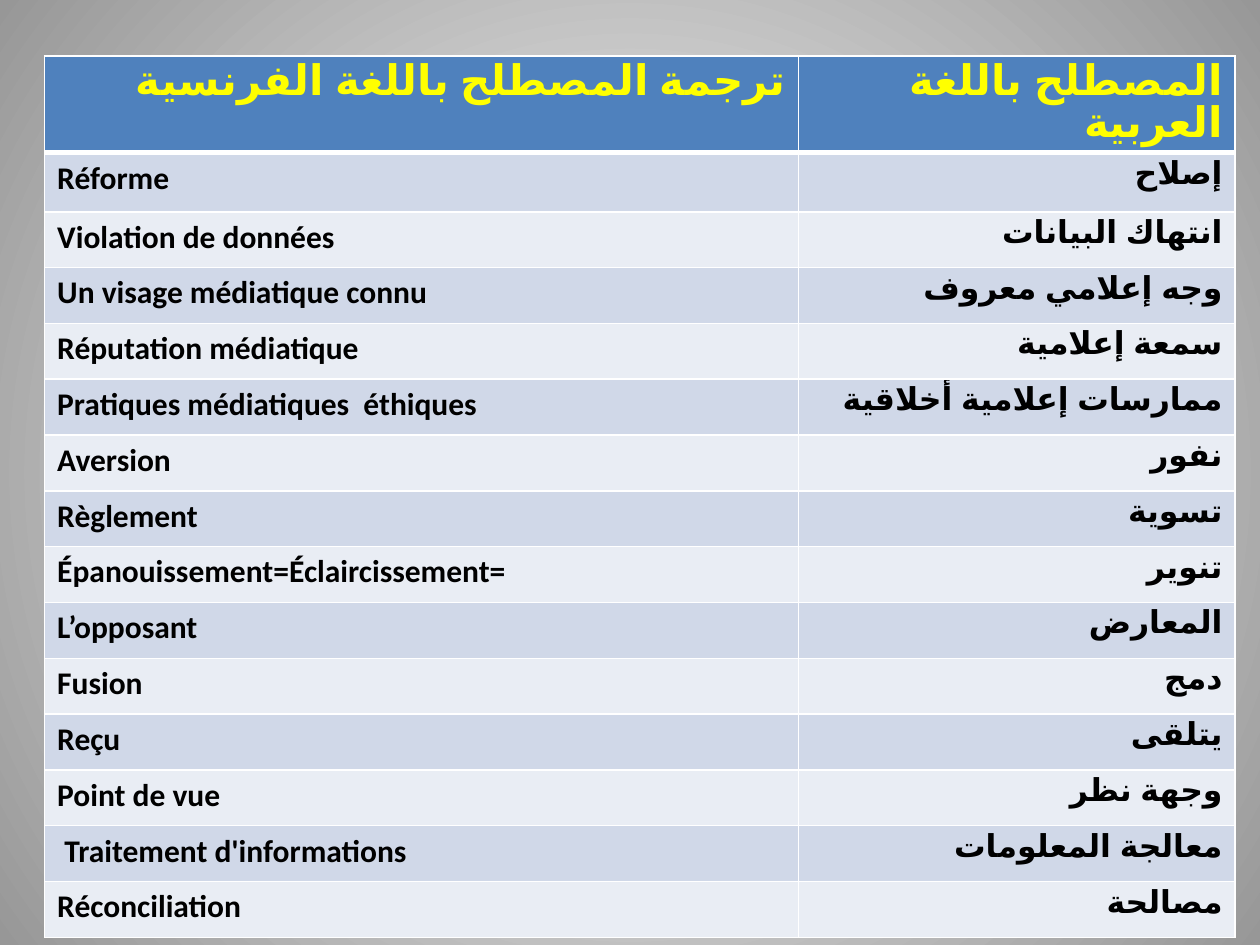
from lxml import etree
from pptx import Presentation
from pptx.dml.color import RGBColor
from pptx.enum.lang import MSO_LANGUAGE_ID
from pptx.enum.text import PP_ALIGN
from pptx.oxml.ns import qn
from pptx.util import Cm, Pt

LEFT = PP_ALIGN.LEFT
RIGHT = PP_ALIGN.RIGHT
ARABIC = MSO_LANGUAGE_ID.ARABIC_ALGERIA
FRENCH = MSO_LANGUAGE_ID.FRENCH
WHITE = "FFFFFF"
BORDER_SIDES = ("lnL", "lnR", "lnT", "lnB")

TERMS = [
    ("ترجمة المصطلح باللغة الفرنسية", "المصطلح باللغة العربية"),
    ("Réforme", "إصلاح"),
    ("Violation de données", "انتهاك البيانات"),
    ("Un visage médiatique connu", "وجه إعلامي معروف"),
    ("Réputation médiatique", "سمعة إعلامية"),
    ("Pratiques médiatiques  éthiques", "ممارسات إعلامية أخلاقية"),
    ("Aversion", "نفور"),
    ("Règlement", "تسوية"),
    ("Épanouissement=Éclaircissement=", "تنوير"),
    ("L’opposant", "المعارض"),
    ("Fusion", "دمج"),
    ("Reçu", "يتلقى"),
    ("Point de vue", "وجهة نظر"),
    (" Traitement d'informations", "معالجة المعلومات"),
    ("Réconciliation", "مصالحة"),
]


def color(value):
    return RGBColor.from_string(value)


def write_cell(cell, text, size, font_color, fill, arabic, bottom_width):
    properties = cell._tc.get_or_add_tcPr()
    for side in BORDER_SIDES:
        width = bottom_width if side == "lnB" else 1
        line = etree.SubElement(properties, qn(f"a:{side}"), w=str(Pt(width)))
        solid = etree.SubElement(line, qn("a:solidFill"))
        etree.SubElement(solid, qn("a:srgbClr"), val=WHITE)
    cell.fill.solid()
    cell.fill.fore_color.rgb = color(fill)
    paragraph = cell.text_frame.paragraphs[0]
    paragraph.alignment = RIGHT if arabic else LEFT
    if arabic:
        paragraph._p.get_or_add_pPr().set("rtl", "1")
    run = paragraph.add_run()
    run.text = text
    run.font.language_id = ARABIC if arabic else FRENCH
    run.font.name = "Calibri"
    run.font.size = Pt(size)
    run.font.bold = True
    run.font.color.rgb = color(font_color)


presentation = Presentation()
presentation.slide_width = Cm(25.4)
presentation.slide_height = Cm(19.05)
slide = presentation.slides.add_slide(presentation.slide_layouts[6])

background = slide.background.fill
background.gradient()
for stop, value in zip(background.gradient_stops, (WHITE, "979797")):
    stop.color.rgb = color(value)
gradient = slide._element.find(".//" + qn("a:gradFill"))
gradient.remove(gradient.find(qn("a:lin")))
circle = etree.SubElement(gradient, qn("a:path"), path="circle")
etree.SubElement(circle, qn("a:fillToRect"), l="50000", t="50000", r="50000", b="50000")

table = slide.shapes.add_table(
    len(TERMS), 2, Cm(0.9), Cm(1.13), Cm(24), Cm(17.75)
).table
table.columns[0].width = Cm(15.2)
table.columns[1].width = Cm(8.8)

for row_index, terms in enumerate(TERMS):
    header = row_index == 0
    table.rows[row_index].height = Cm({0: 1.95, 1: 1.19}.get(row_index, 1.125))
    band = "D0D8E8" if row_index % 2 else "E9EDF4"
    for column_index, term in enumerate(terms):
        write_cell(
            table.cell(row_index, column_index),
            term,
            size=24 if header else 18,
            font_color="FFFF00" if header else "000000",
            fill="4F81BD" if header else band,
            arabic=header or column_index == 1,
            bottom_width=3 if header else 1,
        )

presentation.save("out.pptx")
